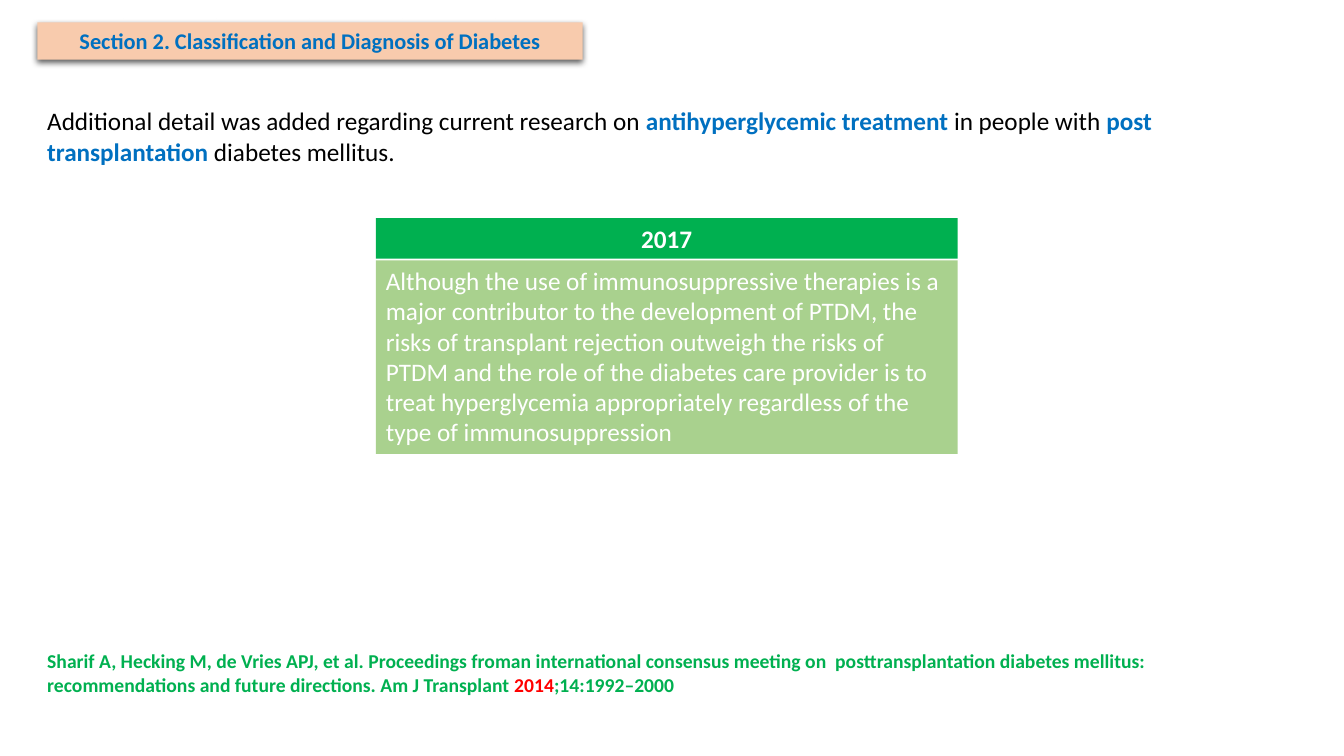
from lxml.etree import fromstring
from pptx import Presentation
from pptx.dml.color import RGBColor
from pptx.enum.shapes import MSO_SHAPE as Preset
from pptx.enum.text import MSO_ANCHOR as Anchor, MSO_AUTO_SIZE as AutoSize, PP_ALIGN as Align
from pptx.util import Pt

BLACK = RGBColor(0x00, 0x00, 0x00)
WHITE = RGBColor(0xFF, 0xFF, 0xFF)
BLUE = RGBColor(0x00, 0x70, 0xC0)
RED = RGBColor(0xFF, 0x00, 0x00)
GREEN = RGBColor(0x00, 0xB0, 0x50)
LIGHT_GREEN = RGBColor(0xA9, 0xD1, 0x8E)
PEACH = RGBColor(0xF8, 0xCB, 0xAD)

SECTION = [[("Section 2. Classification and Diagnosis of Diabetes", BLUE, True)]]
UPDATE = [[
    ("Additional detail was added regarding current research on ", BLACK, False),
    ("antihyperglycemic treatment ", BLUE, True),
    ("in people with ", BLACK, False),
    ("post transplantation ", BLUE, True),
    ("diabetes mellitus.", BLACK, False),
]]
YEAR = [[("2017", WHITE, True)]]
STATEMENT = [
    [("Although the use of immunosuppressive therapies is a major contributor to the "
      "development of PTDM, the risks of transplant rejection outweigh the risks of", WHITE, False)],
    [("PTDM and the role of the diabetes care provider is to treat hyperglycemia "
      "appropriately regardless of the type of immunosuppression", WHITE, False)],
]
CITATION = [[
    ("Sharif A, Hecking M, de Vries APJ, et al. Proceedings froman international consensus "
     "meeting on  posttransplantation diabetes mellitus: recommendations and future "
     "directions. Am J Transplant ", GREEN, True),
    ("2014", RED, True),
    (";14:1992–2000", GREEN, True),
]]

SHADOW = (
    '<a:effectLst xmlns:a="http://schemas.openxmlformats.org/drawingml/2006/main">'
    '<a:outerShdw blurRad="57150" dist="19050" dir="5400000" algn="ctr" rotWithShape="0">'
    '<a:srgbClr val="000000"><a:alpha val="63000"/></a:srgbClr>'
    '</a:outerShdw></a:effectLst>'
)

MARGIN = 26.64
CARD_LEFT, CARD_TOP, CARD_WIDTH = 268.56, 155.8, 415.44
YEAR_HEIGHT, CARD_GAP, STATEMENT_HEIGHT = 29, 1.2, 138.24


def apply(target, values):
    for name, value in values.items():
        setattr(target, name, value)


def place(part, left, top, width, height):
    apply(part, dict(left=Pt(left), top=Pt(top), width=Pt(width), height=Pt(height)))


def write(part, paragraphs, size, align=Align.LEFT, anchor=Anchor.TOP):
    frame = part.text_frame
    apply(frame, dict(word_wrap=True, auto_size=AutoSize.NONE, vertical_anchor=anchor,
                      margin_left=Pt(7.2), margin_right=Pt(7.2),
                      margin_top=Pt(3.6), margin_bottom=Pt(3.6)))
    for index, pieces in enumerate(paragraphs):
        line = frame.add_paragraph() if index else frame.paragraphs[0]
        line.alignment = align
        for text, colour, bold in pieces:
            run = line.add_run()
            run.text = text
            apply(run.font, dict(name="Calibri", size=Pt(size), bold=bold))
            run.font.color.rgb = colour


def paint(part, colour):
    part.fill.solid()
    part.fill.fore_color.rgb = colour
    part.line.fill.background()


def main():
    deck = Presentation()
    apply(deck, dict(slide_width=Pt(960), slide_height=Pt(540)))
    slide = deck.slides.add_slide(deck.slide_layouts[5])

    section = slide.shapes.title
    place(section, MARGIN, 16, 389.5, 26.64)
    paint(section, PEACH)
    section.element.spPr.append(fromstring(SHADOW))
    write(section, SECTION, 16, Align.CENTER, Anchor.MIDDLE)

    for content, top, width, height, size in [
        (UPDATE, 72, 883.44, 51, 18),
        (CITATION, 460, 833.76, 41, 14),
    ]:
        note = slide.shapes.add_textbox(Pt(MARGIN), Pt(top), Pt(width), Pt(height))
        write(note, content, size)

    card = slide.shapes.add_group_shape()
    top = CARD_TOP
    for content, height, colour, align in [
        (YEAR, YEAR_HEIGHT, GREEN, Align.CENTER),
        (STATEMENT, STATEMENT_HEIGHT, LIGHT_GREEN, Align.LEFT),
    ]:
        panel = card.shapes.add_shape(
            Preset.RECTANGLE, Pt(CARD_LEFT), Pt(top), Pt(CARD_WIDTH), Pt(height))
        panel.shadow.inherit = False
        paint(panel, colour)
        write(panel, content, 18, align)
        top += height + CARD_GAP

    deck.save("out.pptx")


if __name__ == "__main__":
    main()
